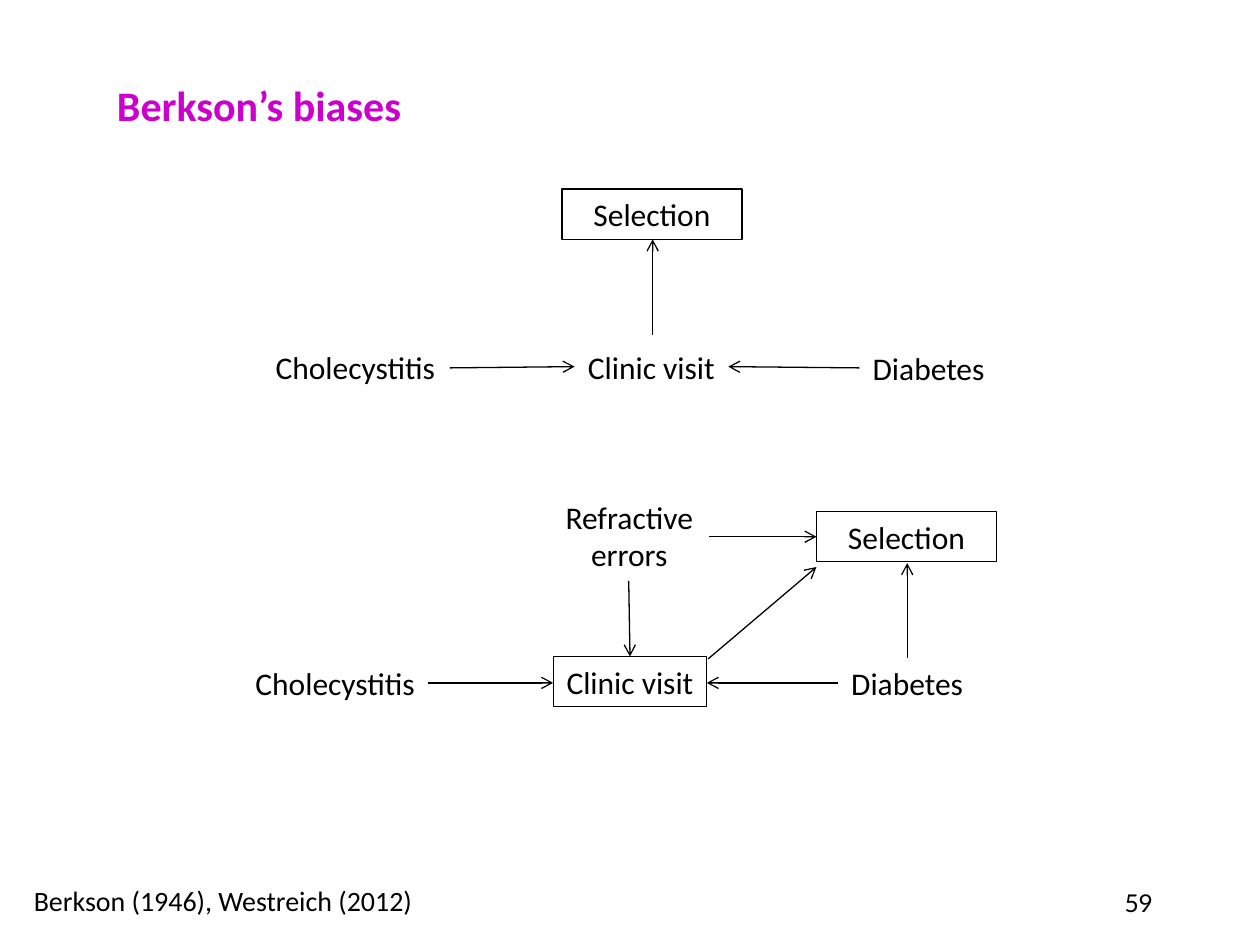
from dataclasses import dataclass

from lxml.etree import SubElement
from pptx import Presentation
from pptx.dml.color import RGBColor
from pptx.enum.shapes import MSO_CONNECTOR as Connector, MSO_SHAPE as Preset
from pptx.enum.text import MSO_ANCHOR as Anchor, MSO_AUTO_SIZE as AutoSize, PP_ALIGN as Align
from pptx.oxml.ns import qn
from pptx.util import Inches, Pt


@dataclass(frozen=True)
class Theme:
    ink: RGBColor = RGBColor(0x00, 0x00, 0x00)
    accent: RGBColor = RGBColor(0xCC, 0x00, 0xCC)
    font: str = "Calibri"
    number_font: str = "Lato"
    title_size: int = 24
    node_size: int = 18
    source_size: int = 16
    number_size: int = 14
    line_width: float = 0.75


THEME = Theme()


@dataclass(frozen=True)
class Label:
    text: str
    left: float
    top: float
    width: float
    height: float = 0.4
    boxed: bool = False
    wrap: bool = False
    grow: bool = True
    align: Align = Align.CENTER
    size: int = THEME.node_size
    font: str = THEME.font
    color: RGBColor = THEME.ink
    bold: bool = False


@dataclass(frozen=True)
class Arrow:
    """A line from start to end, with its head at the end."""
    start: tuple[float, float]
    end: tuple[float, float]


LABELS = [
    Label("Berkson’s biases", 0.83, 0.58, 2.48, 0.5, align=Align.LEFT,
          size=THEME.title_size, color=THEME.accent, bold=True),
    # Upper diagram
    Label("Selection", 4.46, 1.5, 1.43, boxed=True, wrap=True),
    Label("Cholecystitis", 2.08, 2.71, 1.48),
    Label("Clinic visit", 4.56, 2.71, 1.22),
    Label("Diabetes", 6.82, 2.72, 1.1),
    # Lower diagram
    Label("Refractive errors", 4.36, 3.9, 1.27, 0.71, wrap=True),
    Label("Selection", 6.48, 4.06, 1.43, boxed=True, wrap=True),
    Label("Cholecystitis", 1.92, 5.22, 1.48),
    Label("Clinic visit", 4.39, 5.21, 1.22, boxed=True),
    Label("Diabetes", 6.65, 5.22, 1.1),
    # Footer
    Label("Berkson (1946), Westreich (2012)", 0.17, 6.96, 3.25, 0.37,
          align=Align.LEFT, size=THEME.source_size),
    Label("59", 7.92, 7, 1.33, 0.5, wrap=True, grow=False, align=Align.RIGHT,
          size=THEME.number_size, font=THEME.number_font),
]

ARROWS = [
    # Upper diagram
    Arrow((3.57, 2.92), (4.56, 2.91)),
    Arrow((6.82, 2.92), (5.78, 2.91)),
    Arrow((5.18, 2.66), (5.18, 1.9)),
    # Lower diagram
    Arrow((3.4, 5.42), (4.39, 5.42)),
    Arrow((6.65, 5.42), (5.61, 5.42)),
    Arrow((4.99, 4.61), (5, 5.21)),
    Arrow((5.63, 4.26), (6.48, 4.26)),
    Arrow((5.62, 5.23), (6.48, 4.5)),
    Arrow((7.2, 5.22), (7.2, 4.47)),
]


def set_all(target, values: dict) -> None:
    for name, value in values.items():
        setattr(target, name, value)


def style_line(line) -> None:
    line.color.rgb = THEME.ink
    line.width = Pt(THEME.line_width)


def draw_label(slide, label: Label) -> None:
    bounds = [Inches(v) for v in (label.left, label.top, label.width, label.height)]
    if label.boxed:
        shape = slide.shapes.add_shape(Preset.RECTANGLE, *bounds)
        shape.shadow.inherit = False
        shape.fill.background()
        style_line(shape.line)
    else:
        shape = slide.shapes.add_textbox(*bounds)
    frame = shape.text_frame
    set_all(frame, {
        "word_wrap": label.wrap,
        "auto_size": AutoSize.SHAPE_TO_FIT_TEXT if label.grow else AutoSize.NONE,
        "vertical_anchor": Anchor.TOP,
    })
    paragraph = frame.paragraphs[0]
    paragraph.alignment = label.align
    run = paragraph.add_run()
    run.text = label.text
    set_all(run.font, {"name": label.font, "size": Pt(label.size), "bold": label.bold})
    run.font.color.rgb = label.color


def draw_arrow(slide, arrow: Arrow) -> None:
    points = [Inches(v) for v in (*arrow.start, *arrow.end)]
    connector = slide.shapes.add_connector(Connector.STRAIGHT, *points)
    style_line(connector.line)
    properties = connector._element.spPr
    SubElement(properties.find(qn("a:ln")), qn("a:tailEnd"), type="arrow")
    SubElement(properties, qn("a:effectLst"))


def main() -> None:
    presentation = Presentation()
    set_all(presentation, {"slide_width": Inches(10), "slide_height": Inches(7.5)})
    slide = presentation.slides.add_slide(presentation.slide_layouts[6])
    for label in LABELS:
        draw_label(slide, label)
    for arrow in ARROWS:
        draw_arrow(slide, arrow)
    presentation.save("out.pptx")


if __name__ == "__main__":
    main()
